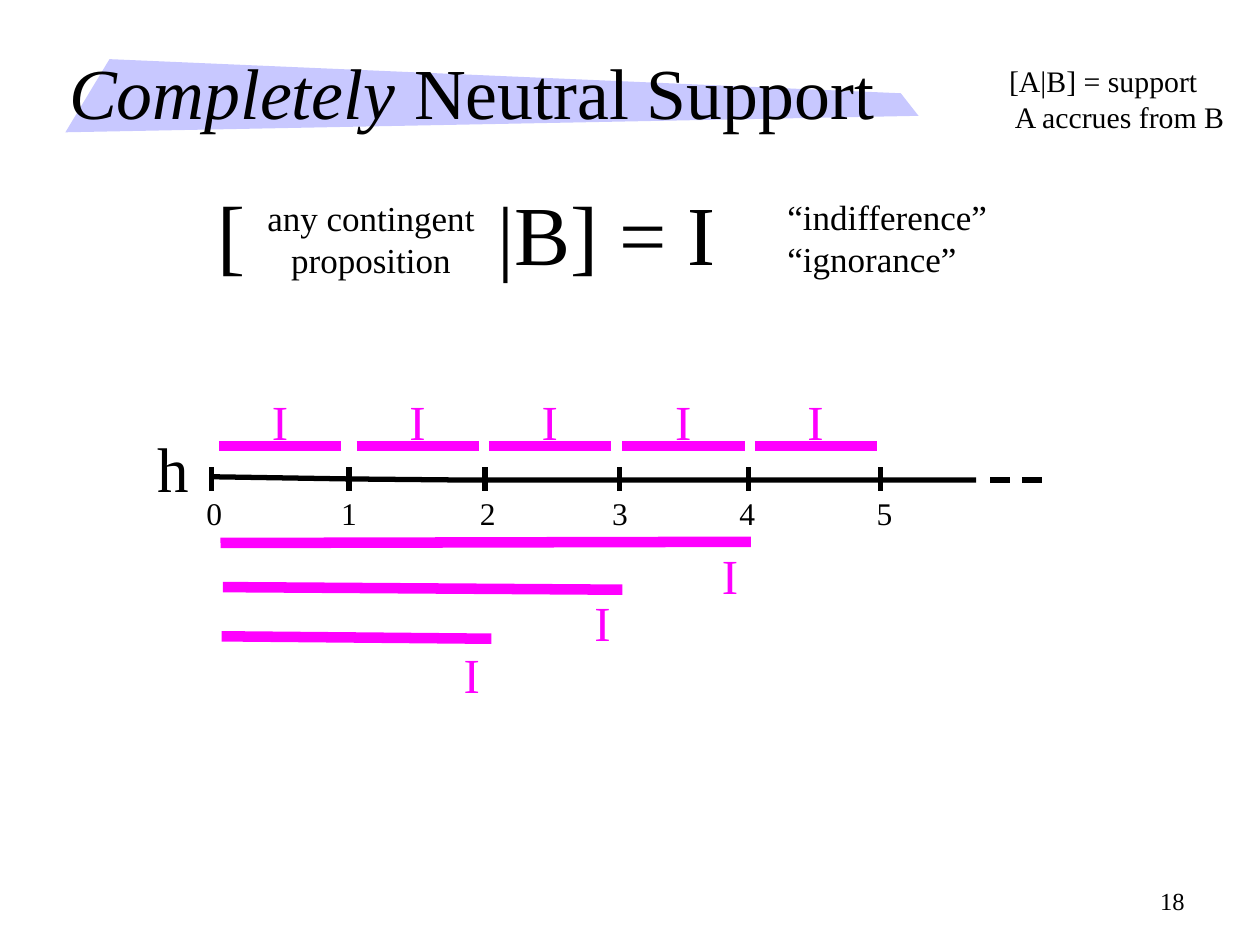
from lxml.etree import SubElement
from pptx import Presentation
from pptx.dml.color import RGBColor
from pptx.enum.shapes import MSO_CONNECTOR
from pptx.enum.text import MSO_ANCHOR, PP_ALIGN
from pptx.oxml.ns import qn
from pptx.util import Pt

BLACK = "000000"
MAGENTA = "FF00FF"
LAVENDER = "C8C8FF"
FONT = "Times New Roman"

presentation = Presentation()
presentation.slide_width = Pt(720)
presentation.slide_height = Pt(540)
slide = presentation.slides.add_slide(presentation.slide_layouts[6])


def add_text(text, left, top, width, height, size, color=BLACK, wrap=True,
             align=PP_ALIGN.LEFT, anchor=MSO_ANCHOR.TOP):
    box = slide.shapes.add_textbox(Pt(left), Pt(top), Pt(width), Pt(height))
    text_frame = box.text_frame
    text_frame.text = text
    text_frame.word_wrap = wrap
    text_frame.vertical_anchor = anchor
    for paragraph in text_frame.paragraphs:
        paragraph.alignment = align
        for run in paragraph.runs:
            run.font.name = FONT
            run.font.size = Pt(size)
            run.font.color.rgb = RGBColor.from_string(color)
    return text_frame


def add_line(x1, y1, x2, y2, width, color=BLACK):
    line = slide.shapes.add_connector(
        MSO_CONNECTOR.STRAIGHT, Pt(x1), Pt(y1), Pt(x2), Pt(y2))
    line.line.width = Pt(width)
    line.line.color.rgb = RGBColor.from_string(color)
    SubElement(line._element.spPr, qn("a:effectLst"))


# Title on its tapered band
builder = slide.shapes.build_freeform(Pt(62.6), Pt(33.8))
builder.add_line_segments(
    [(Pt(514.8), Pt(53.3)), (Pt(524.9), Pt(66.2)), (Pt(37.4), Pt(75.6))])
band = builder.convert_to_shape()
band.shadow.inherit = False
band.fill.solid()
band.fill.fore_color.rgb = RGBColor.from_string(LAVENDER)
band.line.fill.background()

title = add_text("Completely", 32.4, 28, 521.3, 48.2, 41, anchor=MSO_ANCHOR.MIDDLE)
title.paragraphs[0].runs[0].font.italic = True
title_rest = title.paragraphs[0].add_run()
title_rest.text = " Neutral Support"
title_rest.font.name = FONT
title_rest.font.size = Pt(41)
title_rest.font.color.rgb = RGBColor.from_string(BLACK)

add_text("[A|B] = support\n A accrues from B", 569.5, 32.4, 142.6, 48.2, 17)

# Formula, with a tab stop leaving room for the proposition
formula = add_text("[\t|B] = I", 117.4, 100, 298.8, 64.8, 48, wrap=False)
tab_list = SubElement(formula.paragraphs[0]._p.get_or_add_pPr(), qn("a:tabLst"))
SubElement(tab_list, qn("a:tab"), pos=str(Pt(160)), algn="l")
add_text("any contingent proposition", 138.2, 108.7, 147.6, 55.4, 20,
         align=PP_ALIGN.CENTER)
add_text("“indifference”\n“ignorance”", 442.8, 108, 154.8, 55.4, 20)

# Axis h with ticks, numbers and a dashed continuation
add_text("h", 82.8, 241.9, 32.4, 50.4, 36, wrap=False)
builder = slide.shapes.build_freeform(Pt(119.8), Pt(272.4))
builder.add_line_segments(
    [(Pt(200), Pt(273.7)), (Pt(266), Pt(274.3)), (Pt(557.8), Pt(274.3))], close=False)
axis = builder.convert_to_shape()
axis.shadow.inherit = False
axis.fill.background()
axis.line.width = Pt(3)
axis.line.color.rgb = RGBColor.from_string(BLACK)

tick_xs = [121, 199.4, 277.2, 354.2, 427.7, 503.3]
number_lefts = [110.9, 187.9, 267.1, 342.7, 415.4, 493.9]
for number, (tick_x, number_left) in enumerate(zip(tick_xs, number_lefts)):
    add_line(tick_x, 267.1, tick_x, 280.8, 3)
    add_text(str(number), number_left, 279, 23.8, 28.8, 18, wrap=False)
for dash_x in (565.9, 583.9):
    add_line(dash_x, 274.3, dash_x + 11.5, 274.3, 3)

# Unit intervals above the axis, then the nested longer ones below it:
# start, end, and top of the label
intervals = [((x, 254.9), (x + 69.8, 254.9), (x + 23, 220.3))
             for x in (125.3, 203.8, 279.4, 355.7, 431.3)]
intervals += [
    ((126, 310.3), (429.1, 309.6), (405.4, 308.2)),
    ((127.4, 335.5), (355.7, 337), (332.6, 334.8)),
    ((126.7, 363.6), (280.8, 365), (257.8, 365)),
]
for start, end, label_corner in intervals:
    add_line(*start, *end, 6, MAGENTA)
    add_text("I", *label_corner, 23.8, 41, 28, MAGENTA, wrap=False)

add_text("18", 516.2, 500.4, 167.8, 28.8, 14,
         align=PP_ALIGN.RIGHT, anchor=MSO_ANCHOR.MIDDLE)

presentation.save("out.pptx")
